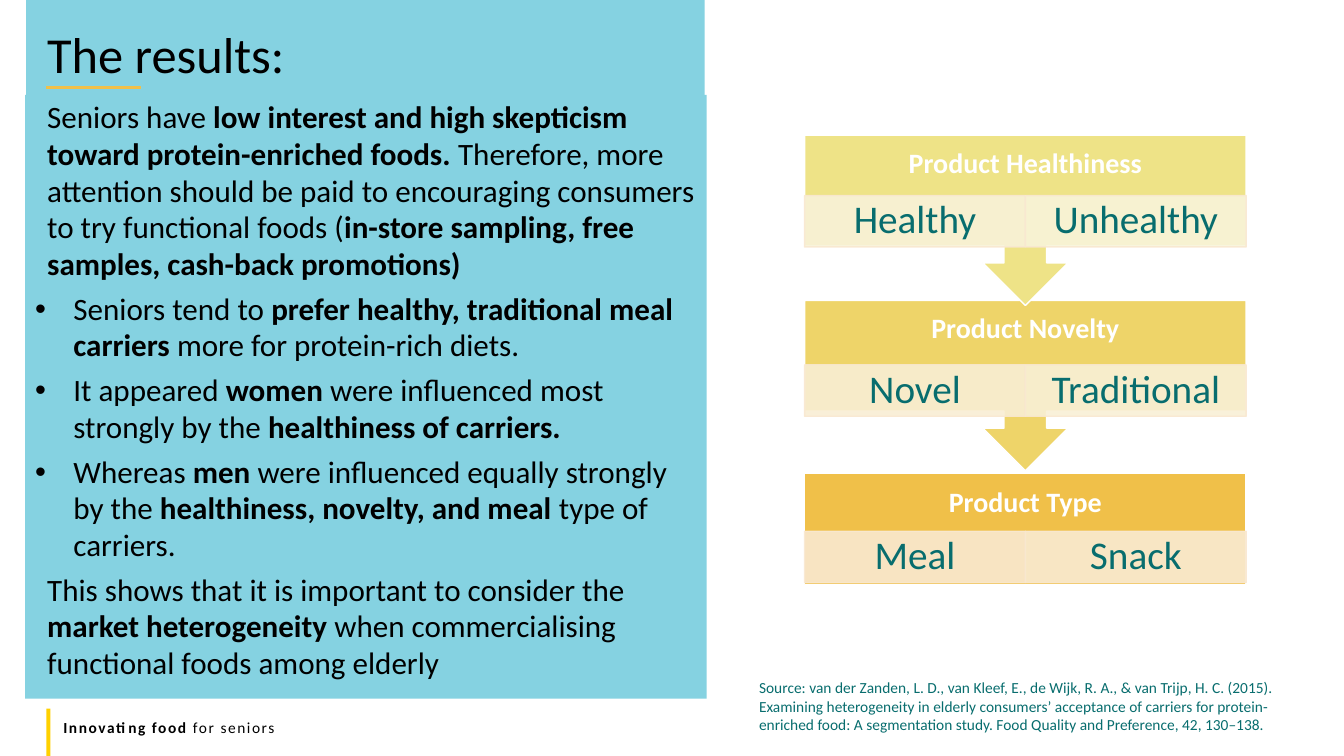
from lxml import etree
from pptx import Presentation
from pptx.dml.color import RGBColor
from pptx.enum.shapes import MSO_CONNECTOR, MSO_SHAPE
from pptx.enum.text import MSO_ANCHOR, PP_ALIGN
from pptx.oxml.ns import qn
from pptx.util import Pt

RECT = MSO_SHAPE.RECTANGLE
CALLOUT = MSO_SHAPE.DOWN_ARROW_CALLOUT
STRAIGHT = MSO_CONNECTOR.STRAIGHT
TOP, MIDDLE = MSO_ANCHOR.TOP, MSO_ANCHOR.MIDDLE
LEFT, CENTER = PP_ALIGN.LEFT, PP_ALIGN.CENTER

PX = 9144
FONT = "Calibri"
BLACK = RGBColor(0x00, 0x00, 0x00)
WHITE = RGBColor(0xFF, 0xFF, 0xFF)
TEAL = RGBColor(0x08, 0x6D, 0x6E)
SKY = RGBColor(0x85, 0xD2, 0xE1)
YELLOW = RGBColor(0xFF, 0xD1, 0x00)
AMBER = RGBColor(0xF0, 0xC0, 0x49)
GOLD = RGBColor(0xEE, 0xD4, 0x69)
LEMON = RGBColor(0xEE, 0xE3, 0x87)
CREAM = RGBColor(0xF9, 0xE8, 0xD0)

FINDINGS = [
    (False, ["Seniors have ",
             "low interest and high skepticism toward protein-enriched foods. ",
             "Therefore, more attention should be paid to encouraging consumers "
             "to try functional foods (",
             "in-store sampling, free samples, cash-back promotions)"]),
    (True, ["Seniors tend to ", "prefer healthy, traditional meal carriers ",
            "more for protein-rich diets."]),
    (True, ["It appeared ", "women ", "were influenced most strongly by the ",
            "healthiness of carriers."]),
    (True, ["Whereas ", "men ", "were influenced equally strongly by the",
            " healthiness, novelty, and meal ", "type of carriers."]),
    (False, ["This shows that it is important to consider the ",
             "market heterogeneity",
             " when commercialising functional foods among elderly"]),
]
STEPS = [
    ("Product Type", 470, 110, 57, RECT, AMBER,
     [("Meal", CREAM), ("Snack", RGBColor(0xF9, 0xEB, 0xD2))]),
    ("Product Novelty", 298, 169, 64, CALLOUT, GOLD,
     [("Novel", RGBColor(0xF9, 0xEE, 0xD4)),
      ("Traditional", RGBColor(0xF9, 0xF0, 0xD6))]),
    ("Product Healthiness", 134, 169, 60, CALLOUT, LEMON,
     [("Healthy", RGBColor(0xF8, 0xF2, 0xD8)),
      ("Unhealthy", RGBColor(0xF8, 0xF4, 0xDA))]),
]
SOURCE = ("Source: van der Zanden, L. D., van Kleef, E., de Wijk, R. A., & van Trijp, "
          "H. C. (2015). Examining heterogeneity in elderly consumers’ acceptance of "
          "carriers for protein-enriched food: A segmentation study. Food Quality and "
          "Preference, 42, 130–138.")


def add_block(slide, kind, x, y, w, h, fill, line=None):
    """Add a filled preset shape, outlined when a line colour is given."""
    sp = slide.shapes.add_shape(kind, x * PX, y * PX, w * PX, h * PX)
    sp.shadow.inherit = False
    sp.fill.solid()
    sp.fill.fore_color.rgb = fill
    if line is None:
        sp.line.fill.background()
    else:
        sp.line.color.rgb = line
        sp.line.width = Pt(1)
    return sp


def add_text_box(slide, x, y, w, h):
    """Add a wrapping text box."""
    sp = slide.shapes.add_textbox(x * PX, y * PX, w * PX, h * PX)
    sp.text_frame.word_wrap = True
    return sp


def set_frame(sp, anchor, inset_x=10, inset_y=5):
    """Set wrapping, anchor and insets of a shape's text."""
    tf = sp.text_frame
    tf.word_wrap = True
    tf.vertical_anchor = anchor
    tf.margin_left = tf.margin_right = inset_x * PX
    tf.margin_top = tf.margin_bottom = inset_y * PX
    return tf


def write(p, parts, size, color, bold_first=False, align=LEFT, spacing=None):
    """Write runs that alternate between regular and bold."""
    p.alignment = align
    p.line_spacing = spacing
    for i, part in enumerate(parts):
        r = p.add_run()
        r.text = part
        r.font.name = FONT
        r.font.size = Pt(size)
        r.font.color.rgb = color
        r.font.bold = (i % 2 == 0) == bold_first


def set_indent(p, left, hanging=0, bullet=None):
    """Set the paragraph indent and an optional bullet."""
    pPr = p._p.get_or_add_pPr()
    pPr.set("marL", str(left * PX))
    pPr.set("indent", str(-hanging * PX))
    if bullet:
        etree.SubElement(pPr, qn("a:buFont")).set("typeface", "Arial")
        etree.SubElement(pPr, qn("a:buChar")).set("char", bullet)


def set_alpha(color_parent, percent):
    """Make the solid colour under an element partly transparent."""
    clr = color_parent.find(qn("a:solidFill")).find(qn("a:srgbClr"))
    etree.SubElement(clr, qn("a:alpha")).set("val", str(percent * 1000))


def add_title(slide, x, y, w, h):
    """Add the title and the short rule below it."""
    sp = add_text_box(slide, x, y, w, h)
    write(sp.text_frame.paragraphs[0], ["The results:"], 36, BLACK, spacing=0.8)
    rule = slide.shapes.add_connector(
        STRAIGHT, (x + 9) * PX, (y + 57) * PX, (x + 103) * PX, (y + 57) * PX)
    rule.line.color.rgb = AMBER
    rule.line.width = Pt(2.25)
    etree.SubElement(rule._element.spPr, qn("a:effectLst"))


def add_findings(slide, x, y, w, h):
    """Add the panel of findings."""
    sp = add_block(slide, RECT, x, y, w, h, SKY)
    tf = set_frame(sp, TOP)
    for i, (bulleted, parts) in enumerate(FINDINGS):
        p = tf.add_paragraph() if i else tf.paragraphs[0]
        if bulleted:
            set_indent(p, 38, 38, "•")
        else:
            set_indent(p, 12)
        if i:
            p.space_before = Pt(6)
        write(p, parts, 22.2, BLACK, spacing=0.98)


def add_step(slide, x, y, w, h, label, row, kind, fill, options):
    """Add one step with its heading and a row of options."""
    sp = add_block(slide, kind, x, y, w, h, fill, WHITE)
    tf = set_frame(sp, TOP, 16, 14)
    write(tf.paragraphs[0], [label], 20, WHITE, True, CENTER, 0.9)
    cell_w = w // len(options)
    for i, (option, tint) in enumerate(options):
        cell = add_block(slide, RECT, x + i * cell_w, y + row, cell_w, 51, tint, CREAM)
        set_alpha(cell._element.spPr, 90)
        set_alpha(cell.line._get_or_add_ln(), 90)
        tf = set_frame(cell, MIDDLE, 22, 4)
        write(tf.paragraphs[0], [option], 28, TEAL, align=CENTER, spacing=0.9)


def add_footer(slide, x, y, w, h):
    """Add the footer line with its yellow marker."""
    sp = add_text_box(slide, x, y, w, h)
    p = sp.text_frame.paragraphs[0]
    write(p, ["Innovating food ", "for seniors"], 11, BLACK, True)
    for r in p.runs:
        r._r.get_or_add_rPr().set("spc", "110")
    add_block(slide, RECT, x - 7, y - 4, 4, 47, YELLOW)


def add_source(slide, x, y, w, h):
    """Add the citation."""
    sp = add_text_box(slide, x, y, w, h)
    write(sp.text_frame.paragraphs[0], [SOURCE], 11, TEAL)


def main():
    """Build the slide and save it."""
    prs = Presentation()
    prs.slide_width, prs.slide_height = 1333 * PX, 750 * PX
    slide = prs.slides.add_slide(prs.slide_layouts[6])
    add_block(slide, RECT, 26, 0, 673, 648, SKY)
    add_footer(slide, 53, 707, 1200, 29)
    add_findings(slide, 25, 94, 676, 599)
    add_title(slide, 37, 30, 556, 64)
    for label, y, h, row, kind, fill, options in STEPS:
        add_step(slide, 798, y, 438, h, label, row, kind, fill, options)
    add_source(slide, 743, 668, 573, 66)
    prs.save("out.pptx")


if __name__ == "__main__":
    main()
